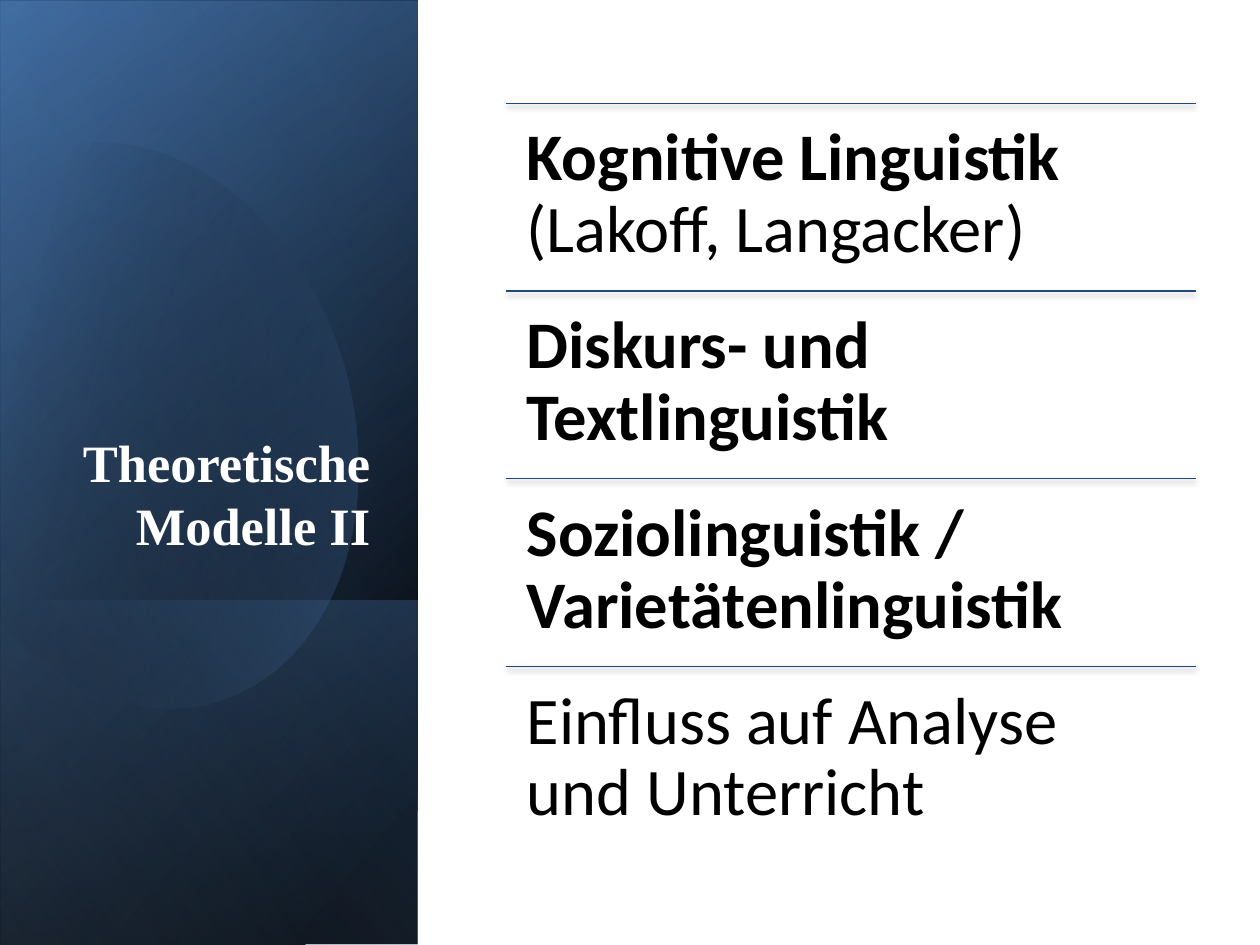
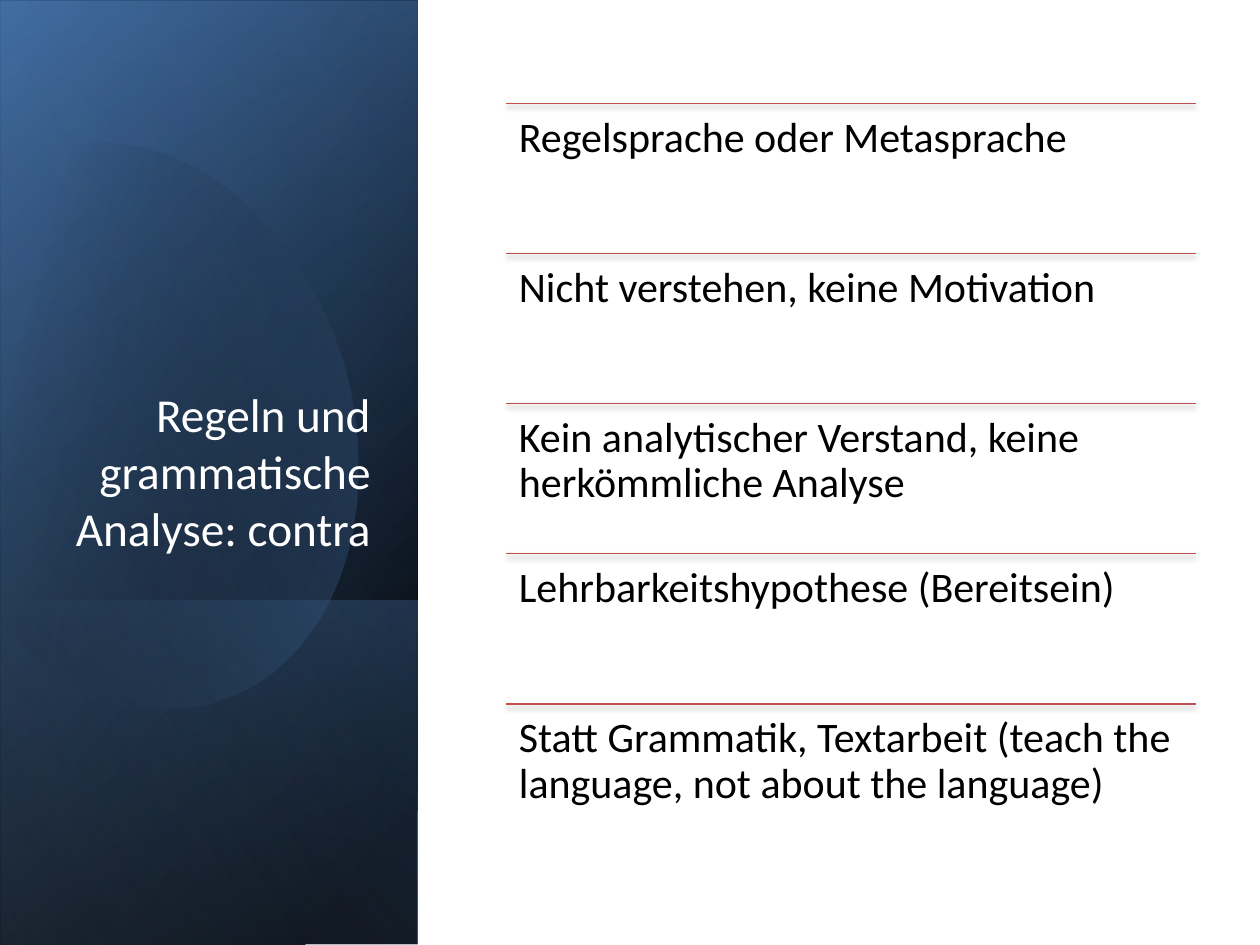
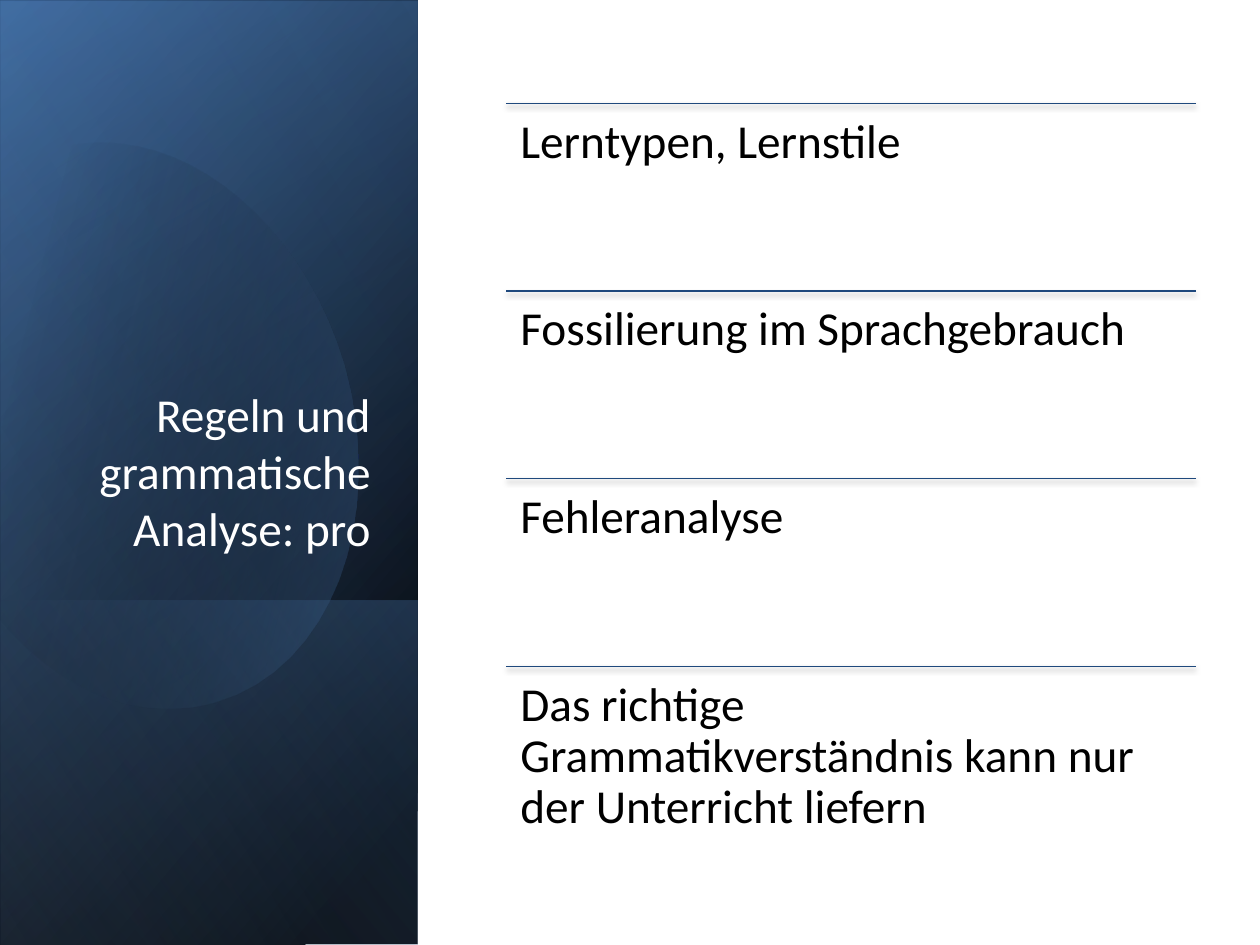
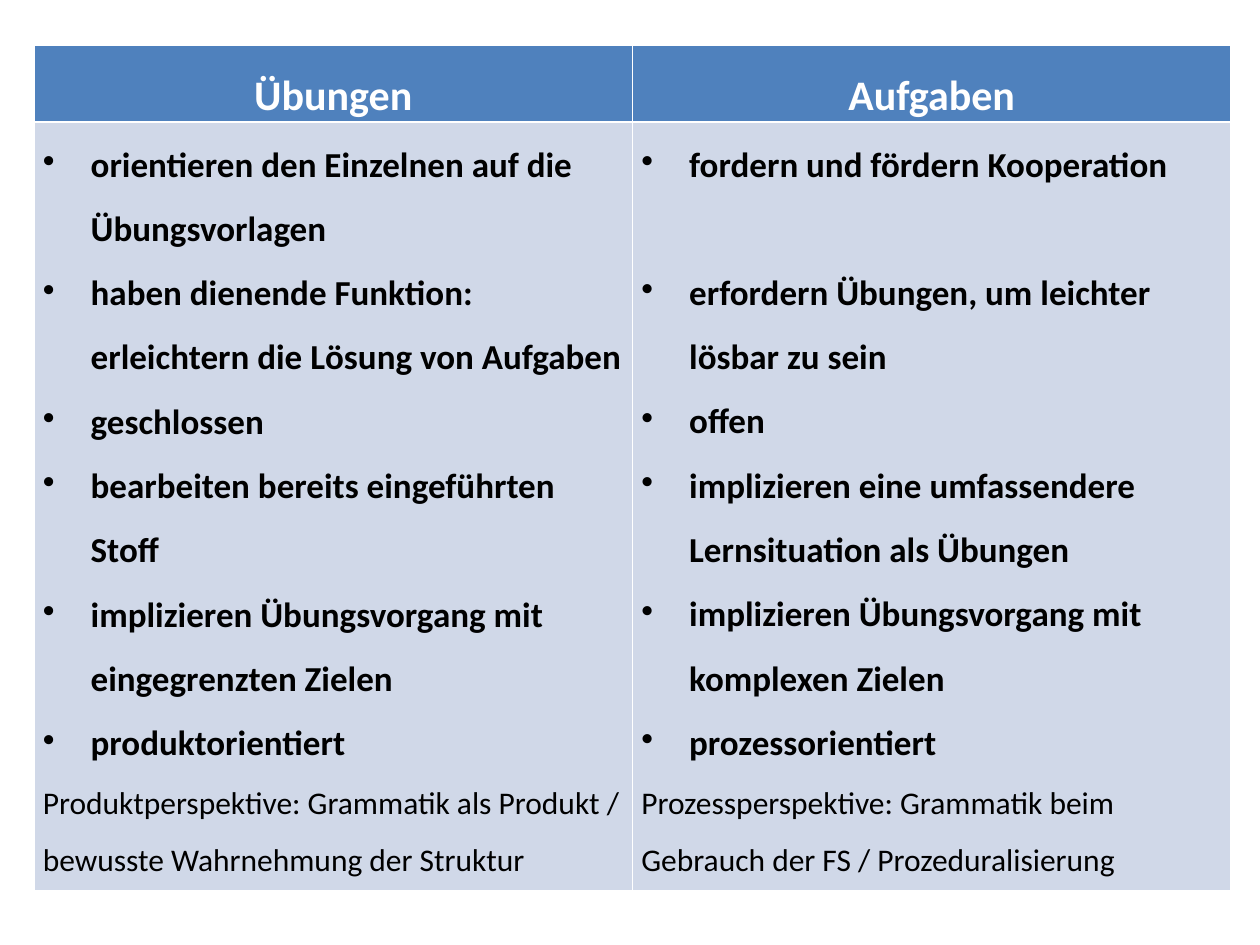
from math import cos, radians, sin

from lxml import etree
from pptx import Presentation
from pptx.dml.color import RGBColor
from pptx.enum.shapes import MSO_CONNECTOR, MSO_SHAPE
from pptx.enum.text import MSO_ANCHOR, PP_ALIGN
from pptx.oxml.ns import qn
from pptx.util import Inches, Pt

RECTANGLE = MSO_SHAPE.RECTANGLE
STRAIGHT = MSO_CONNECTOR.STRAIGHT
TOP, BOTTOM = MSO_ANCHOR.TOP, MSO_ANCHOR.BOTTOM
LEFT, RIGHT, CENTER = PP_ALIGN.LEFT, PP_ALIGN.RIGHT, PP_ALIGN.CENTER

COLORS = {
    "black": "000000",
    "white": "FFFFFF",
    "navy": "1F497D",
    "deep_blue": "376092",
    "blue": "4F81BD",
    "light_blue": "95B3D7",
    "red": "C0504D",
    "pale": "D0D8E8",
}
BODY_FONT = "Calibri"
SERIF_FONT = "Times New Roman"

# Panel layers: box, gradient stops (position %, colour, opacity %), angle
PANEL_BOX = (-2.09, 2.09, 7.5, 3.31)
PANEL_BASE = [
    (PANEL_BOX, [(8, "black", 100), (100, "deep_blue", 100)], 50),
    ((-2.09, 2.11, 7.5, 3.31), [(0, "black", 0), (99, "blue", 46)], 30),
    ((0.29, 4.48, 2.74, 3.31), [(2, "blue", 29), (100, "black", 30)], 130),
]
PANEL_GLOSS = (PANEL_BOX, [(0, "black", 0), (99, "light_blue", 11)], 120)

# Egg outline in slide inches: a 2-number step is a line, a 6-number step a curve
EGG_START = (0.96, 1.14)
EGG_STEPS = [
    (1.71, 1.22, 2.44, 1.92, 2.73, 2.9),
    (3.07, 4.12, 2.62, 5.31, 1.71, 5.57),
    (1.14, 5.74, 0.53, 5.5, 0.07, 5),
    (-0.03, 4.88),
    (-0.25, 1.66),
    (-0.15, 1.54),
    (0.02, 1.37, 0.22, 1.25, 0.45, 1.18),
    (0.62, 1.13, 0.79, 1.12, 0.96, 1.14),
]
EGG_CENTER = (1.19, 3.345)
EGG_TILT = 343.9
EGG_STOPS = [(29, "black", 0), (100, "blue", 43)]

LIST_LEFT, LIST_TOP, LIST_WIDTH, LIST_HEIGHT = 4.02, 0.82, 5.47, 5.96


def rgb(name):
    return RGBColor.from_string(COLORS[name])


def add_xml(parent, tag, **attributes):
    return etree.SubElement(parent, qn(tag), attributes)


def curve_points(start, step, pieces=16):
    """Points along a cubic curve, without its start."""
    corners = [start, step[:2], step[2:4], step[4:]]
    for piece in range(1, pieces + 1):
        t = piece / pieces
        weights = ((1 - t) ** 3, 3 * t * (1 - t) ** 2, 3 * t * t * (1 - t), t ** 3)
        yield tuple(sum(w * c[axis] for w, c in zip(weights, corners)) for axis in (0, 1))


def egg_points():
    """Egg outline turned upright, so that the shape itself can carry the tilt."""
    outline = [EGG_START]
    for step in EGG_STEPS:
        outline.extend([step] if len(step) == 2 else curve_points(outline[-1], step))
    turn = radians(-EGG_TILT)
    center_x, center_y = EGG_CENTER
    return [(Inches(center_x + (x - center_x) * cos(turn) - (y - center_y) * sin(turn)),
             Inches(center_y + (x - center_x) * sin(turn) + (y - center_y) * cos(turn)))
            for x, y in outline]


class Deck:
    def __init__(self):
        self.presentation = Presentation()
        self.presentation.slide_width = Inches(10)
        self.presentation.slide_height = Inches(7.5)
        self.slide = None

    def new_slide(self):
        self.slide = self.presentation.slides.add_slide(self.presentation.slide_layouts[6])

    def gradient(self, shape, stops, angle):
        shape.shadow.inherit = False
        shape.line.fill.background()
        shape.fill.gradient()
        shape.fill.gradient_angle = 360 - angle
        for stop, (position, color, _) in zip(shape.fill.gradient_stops, stops):
            stop.position = position / 100
            stop.color.rgb = rgb(color)
        tones = shape.element.spPr.iter(qn("a:srgbClr"))
        for tone, (_, _, opacity) in zip(tones, stops):
            if opacity < 100:
                add_xml(tone, "a:alpha", val=str(opacity * 1000))

    def layer(self, box, stops, angle):
        """Gradient rectangle, mirrored and turned upright."""
        shape = self.slide.shapes.add_shape(RECTANGLE, *map(Inches, box))
        shape.rotation = 90
        shape.element.spPr.find(qn("a:xfrm")).set("flipH", "1")
        self.gradient(shape, stops, angle)

    def egg(self):
        start, *rest = egg_points()
        builder = self.slide.shapes.build_freeform(*start)
        builder.add_line_segments(rest, close=True)
        shape = builder.convert_to_shape()
        shape.rotation = EGG_TILT
        self.gradient(shape, EGG_STOPS, 30)

    def panel(self):
        for layer in PANEL_BASE:
            self.layer(*layer)
        self.egg()
        self.layer(*PANEL_GLOSS)

    def run(self, paragraph, text, size, color="black", bold=False, font=BODY_FONT):
        run = paragraph.add_run()
        run.text = text
        run.font.size = Pt(size)
        run.font.name = font
        run.font.bold = bold
        run.font.color.rgb = rgb(color)

    def text_box(self, box, insets, anchor=TOP, align=LEFT):
        """Returns the first paragraph of a new wrapping text box."""
        frame = self.slide.shapes.add_textbox(*map(Inches, box)).text_frame
        frame.word_wrap = True
        frame.vertical_anchor = anchor
        frame.margin_left = frame.margin_right = Inches(insets[0])
        frame.margin_top = frame.margin_bottom = Inches(insets[1])
        frame.paragraphs[0].alignment = align
        return frame.paragraphs[0]

    def title(self, text, size, **style):
        paragraph = self.text_box((0.48, 1.84, 2.56, 2.62), (0.1, 0.05), BOTTOM, RIGHT)
        self.run(paragraph, text, size, "white", **style)

    def rule(self, top, color):
        """Thin line with a soft shadow below it."""
        line = self.slide.shapes.add_connector(
            STRAIGHT, Inches(LIST_LEFT), Inches(top),
            Inches(LIST_LEFT + LIST_WIDTH), Inches(top))
        line.line.color.rgb = rgb(color)
        line.line.width = Pt(0.75)
        effects = add_xml(line.element.spPr, "a:effectLst")
        shadow = add_xml(effects, "a:outerShdw", blurRad=str(Pt(3.1)), dist=str(Pt(1.8)),
                         dir="5400000", rotWithShape="0")
        tone = add_xml(shadow, "a:srgbClr", val=COLORS["black"])
        add_xml(tone, "a:alpha", val="35000")

    def ruled_list(self, entries, size, inset, color):
        """Equal rows under rules; an entry is a list of (text, bold) runs."""
        height = LIST_HEIGHT / len(entries)
        for row, entry in enumerate(entries):
            top = LIST_TOP + row * height
            self.rule(top, color)
            paragraph = self.text_box((LIST_LEFT, top, LIST_WIDTH, height), (inset, inset))
            paragraph.line_spacing = 0.9
            for text, bold in entry:
                self.run(paragraph, text, size, bold=bold)

    def topic(self, title, title_size, entries, size, inset, color, **title_style):
        self.new_slide()
        self.panel()
        self.title(title, title_size, **title_style)
        self.ruled_list(entries, size, inset, color)

    def style_cell(self, cell, color):
        cell.margin_left = cell.margin_right = Inches(0.07)
        cell.margin_top = cell.margin_bottom = 0
        cell.fill.solid()
        cell.fill.fore_color.rgb = rgb(color)
        properties = cell._tc.get_or_add_tcPr()
        for place, side in enumerate(("a:lnL", "a:lnR", "a:lnT", "a:lnB")):
            border = etree.Element(qn(side), w=str(Pt(1)))
            add_xml(add_xml(border, "a:solidFill"), "a:srgbClr", val=COLORS["white"])
            properties.insert(place, border)

    def bullet(self, paragraph):
        properties = paragraph._p.get_or_add_pPr()
        properties.set("marL", str(Inches(0.38)))
        properties.set("indent", str(-Inches(0.38)))
        add_xml(properties, "a:buChar", char="•")

    def comparison(self, columns):
        """Table with one column per (heading, bullet points, summary)."""
        self.new_slide()
        table = self.slide.shapes.add_table(
            2, len(columns), Inches(0.27), Inches(0.36), Inches(9.5), Inches(6.62)).table
        table.horz_banding = False
        table.rows[0].height = Inches(0.52)
        table.rows[1].height = Inches(6.1)
        for column, (heading, points, summary) in enumerate(columns):
            head, body = table.cell(0, column), table.cell(1, column)
            self.style_cell(head, "blue")
            self.style_cell(body, "pale")
            paragraph = head.text_frame.paragraphs[0]
            paragraph.alignment = CENTER
            paragraph.line_spacing = 1.5
            self.run(paragraph, heading, 24, "white", bold=True)
            paragraph = body.text_frame.paragraphs[0]
            for text, gap_after in points:
                paragraph.line_spacing = 1.5
                paragraph.space_after = Pt(gap_after)
                self.bullet(paragraph)
                self.run(paragraph, text, 20, bold=True)
                paragraph = body.text_frame.add_paragraph()
            paragraph.line_spacing = 1.5
            self.run(paragraph, summary, 18)


def plain(*texts):
    return [[(text, False)] for text in texts]


def main():
    deck = Deck()

    deck.topic("Theoretische Modelle II", 30, [
        [("Kognitive Linguistik", True), (" (Lakoff, Langacker)", False)],
        [("Diskurs- und Textlinguistik", True)],
        [("Soziolinguistik / Varietätenlinguistik", True)],
        [("Einfluss auf Analyse und Unterricht", False)],
    ], 38, 0.16, "navy", bold=True, font=SERIF_FONT)

    deck.topic("Regeln und grammatische Analyse: contra", 27, plain(
        "Regelsprache oder Metasprache",
        "Nicht verstehen, keine Motivation",
        "Kein analytischer Verstand, keine herkömmliche Analyse",
        "Lehrbarkeitshypothese (Bereitsein)",
        "Statt Grammatik, Textarbeit (teach the language, not about the language)",
    ), 24, 0.1, "red")

    deck.topic("Regeln und grammatische Analyse: pro", 27, plain(
        "Lerntypen, Lernstile",
        "Fossilierung im Sprachgebrauch",
        "Fehleranalyse",
        "Das richtige Grammatikverständnis kann nur der Unterricht liefern",
    ), 27, 0.11, "navy")

    one_line = 36.6
    deck.comparison([
        ("Übungen", [
            ("orientieren den Einzelnen auf die Übungsvorlagen", 0),
            ("haben dienende Funktion: erleichtern die Lösung von Aufgaben", 0),
            ("geschlossen", 0),
            ("bearbeiten bereits eingeführten Stoff", 0),
            ("implizieren Übungsvorgang mit eingegrenzten Zielen", 0),
            ("produktorientiert", 0),
        ], "Produktperspektive: Grammatik als Produkt / bewusste Wahrnehmung der Struktur"),
        ("Aufgaben", [
            ("fordern und fördern Kooperation", one_line),
            ("erfordern Übungen, um leichter lösbar zu sein", 0),
            ("offen", 0),
            ("implizieren eine umfassendere Lernsituation als Übungen", 0),
            ("implizieren Übungsvorgang mit komplexen Zielen", 0),
            ("prozessorientiert", 0),
        ], "Prozessperspektive: Grammatik beim Gebrauch der FS / Prozeduralisierung"),
    ])

    deck.presentation.save("out.pptx")


if __name__ == "__main__":
    main()
